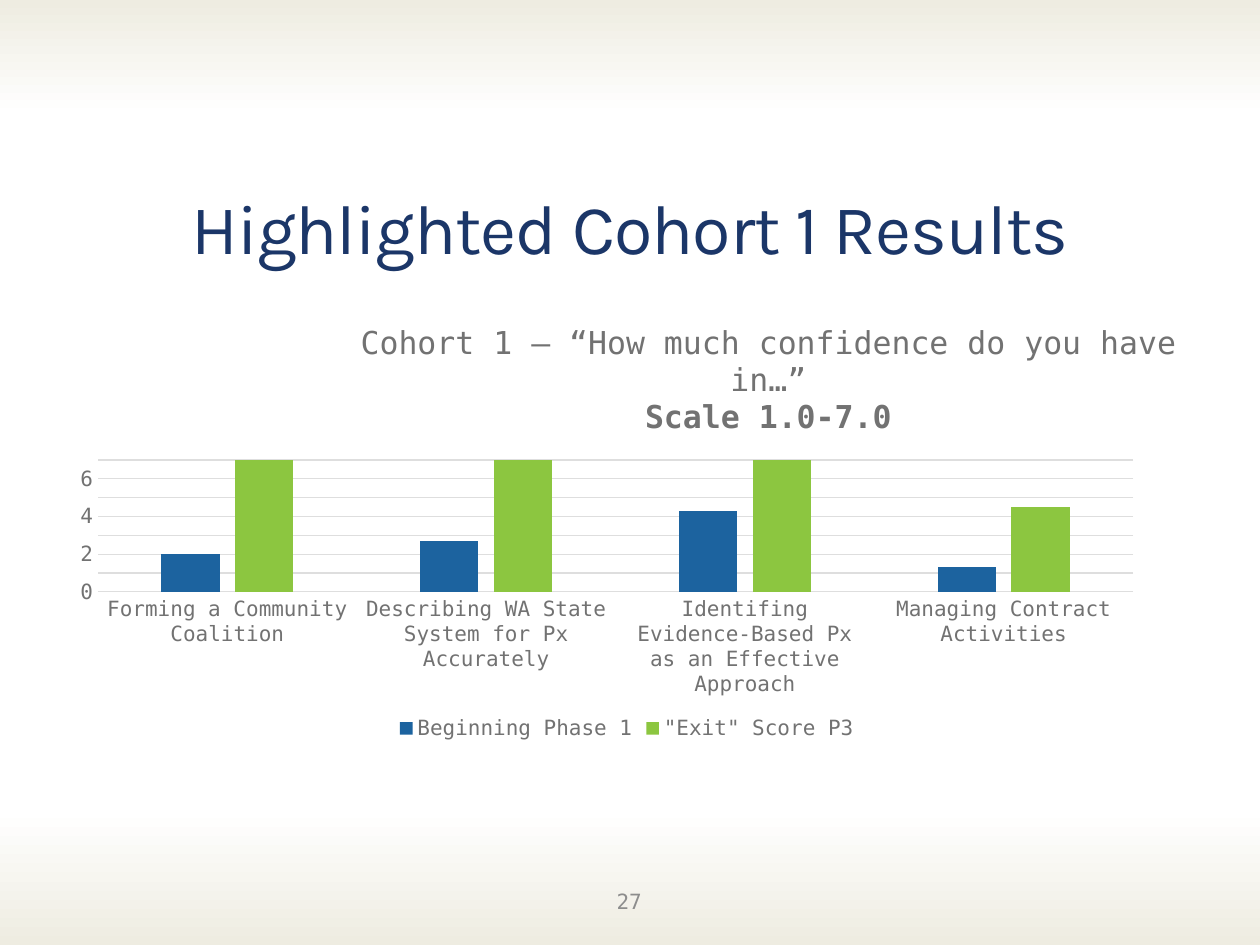
from dataclasses import dataclass

from lxml import etree
from pptx import Presentation
from pptx.chart.data import CategoryChartData
from pptx.dml.color import RGBColor
from pptx.enum.chart import XL_CHART_TYPE, XL_LEGEND_POSITION, XL_TICK_MARK
from pptx.enum.shapes import MSO_SHAPE
from pptx.enum.text import MSO_ANCHOR, PP_ALIGN
from pptx.oxml.ns import qn
from pptx.util import Inches, Pt

COLUMNS = XL_CHART_TYPE.COLUMN_CLUSTERED
BOTTOM = XL_LEGEND_POSITION.BOTTOM
NO_TICK = XL_TICK_MARK.NONE
RECTANGLE = MSO_SHAPE.RECTANGLE
MIDDLE = MSO_ANCHOR.MIDDLE
CENTER = PP_ALIGN.CENTER


@dataclass(frozen=True)
class Theme:
    """Colours, fonts and type sizes of the slide."""
    heading_font: str = "Karla"
    body_font: str = "DejaVu Sans Mono"
    heading: str = "1B3668"
    body: str = "727272"
    number: str = "8D8D8D"
    grid: str = "DEDEDE"
    band: str = "EEECE1"
    paper: str = "FFFFFF"
    heading_size: float = 40
    chart_title_size: float = 18
    label_size: float = 12
    line_width: float = 0.75


THEME = Theme()
HEADING = "Highlighted Cohort 1 Results"
PAGE_NUMBER = "27"
BANDS = [((0, 6.42, 10, 1.08), 180), ((0, 0, 10, 0.92), 0)]
CHART_BOX = (0.51, 2.43, 8.93, 3.49)
CHART_TITLE = [("Cohort 1 – “How much confidence do you have in…”", False),
               ("Scale 1.0-7.0", True)]
CATEGORIES = ["Forming a Community Coalition",
              "Describing WA State System for Px Accurately",
              "Identifing Evidence-Based Px as an Effective Approach",
              "Managing Contract Activities"]
SERIES = [("Beginning Phase 1", (2, 2.7, 4.3, 1.3), "1C639F"),
          ('"Exit" Score P3', (7, 7, 7, 4.5), "8CC640")]
TITLE_LAYOUT = {"x": 0.26, "y": 0.03}
PLOT_LAYOUT = {"x": 0.03, "y": 0.35, "w": 0.92, "h": 0.3}


def style(font, size, color, name=THEME.body_font, bold=False):
    font.size, font.name, font.bold = Pt(size), name, bold
    font.color.rgb = RGBColor.from_string(color)


def add_band(page, place, rotation):
    band = page.shapes.add_shape(RECTANGLE, *map(Inches, place))
    band.shadow.inherit = False
    band.rotation = rotation
    band.line.fill.background()
    band.fill.gradient()
    band.fill.gradient_angle = 270
    for stop, color, position in zip(band.fill.gradient_stops, (THEME.band, THEME.paper), (0, 1)):
        stop.color.rgb = RGBColor.from_string(color)
        stop.position = position


def add_text(page, place, text, size, color, name):
    box = page.shapes.add_textbox(*map(Inches, place))
    frame = box.text_frame
    frame.word_wrap, frame.vertical_anchor = True, MIDDLE
    para = frame.paragraphs[0]
    para.alignment = CENTER
    span = para.add_run()
    span.text = text
    style(span.font, size, color, name)
    return span


def set_layout(parent, values, inner=False):
    for old in parent.findall(qn("c:layout")):
        parent.remove(old)
    layout = etree.Element(qn("c:layout"))
    manual = etree.SubElement(layout, qn("c:manualLayout"))
    if inner:
        etree.SubElement(manual, qn("c:layoutTarget"), val="inner")
    for key in ("x", "y"):
        etree.SubElement(manual, qn(f"c:{key}Mode"), val="edge")
    for key, value in values.items():
        etree.SubElement(manual, qn(f"c:{key}"), val=str(value))
    text = parent.find(qn("c:tx"))
    parent.insert(0 if text is None else parent.index(text) + 1, layout)


def set_line(line):
    line.color.rgb = RGBColor.from_string(THEME.grid)
    line.width = Pt(THEME.line_width)


def add_chart_title(chart):
    frame = chart.chart_title.text_frame
    for index, (text, bold) in enumerate(CHART_TITLE):
        para = frame.add_paragraph() if index else frame.paragraphs[0]
        para.alignment = CENTER
        span = para.add_run()
        span.text = text
        style(span.font, THEME.chart_title_size, THEME.body, bold=bold)
    chart.chart_title.include_in_layout = False
    set_layout(chart.chart_title._element, TITLE_LAYOUT)


def add_results_chart(page):
    data = CategoryChartData()
    data.categories = CATEGORIES
    for name, values, _ in SERIES:
        data.add_series(name, values)
    chart = page.shapes.add_chart(COLUMNS, *map(Inches, CHART_BOX), data).chart
    style(chart.font, THEME.label_size, THEME.body)
    add_chart_title(chart)

    plot = chart.plots[0]
    plot.gap_width, plot.overlap, plot.vary_by_categories = 219, -27, False
    for series, (_, _, color) in zip(plot.series, SERIES):
        series.format.fill.solid()
        series.format.fill.fore_color.rgb = RGBColor.from_string(color)
    set_layout(chart._chartSpace.chart.plotArea, PLOT_LAYOUT, inner=True)

    for axis in (chart.category_axis, chart.value_axis):
        axis.major_tick_mark = axis.minor_tick_mark = NO_TICK
        style(axis.tick_labels.font, THEME.label_size, THEME.body)
    set_line(chart.category_axis.format.line)
    scale = chart.value_axis
    scale.minimum_scale, scale.maximum_scale, scale.major_unit = 0, 7, 1
    scale.format.line.fill.background()
    set_line(scale.major_gridlines.format.line)

    chart.has_legend = True
    chart.legend.position, chart.legend.include_in_layout = BOTTOM, False
    style(chart.legend.font, THEME.label_size, THEME.body)


def main():
    deck = Presentation()
    deck.slide_width, deck.slide_height = Inches(10), Inches(7.5)
    page = deck.slides.add_slide(deck.slide_layouts[6])
    for place, rotation in BANDS:
        add_band(page, place, rotation)
    heading = add_text(page, (0.5, 1.17, 9, 1.25), HEADING,
                       THEME.heading_size, THEME.heading, THEME.heading_font)
    heading.font._element.set("spc", "-50")
    add_text(page, (3.83, 6.95, 2.33, 0.4), PAGE_NUMBER,
             THEME.label_size, THEME.number, THEME.body_font)
    add_results_chart(page)
    deck.save("out.pptx")


if __name__ == "__main__":
    main()
